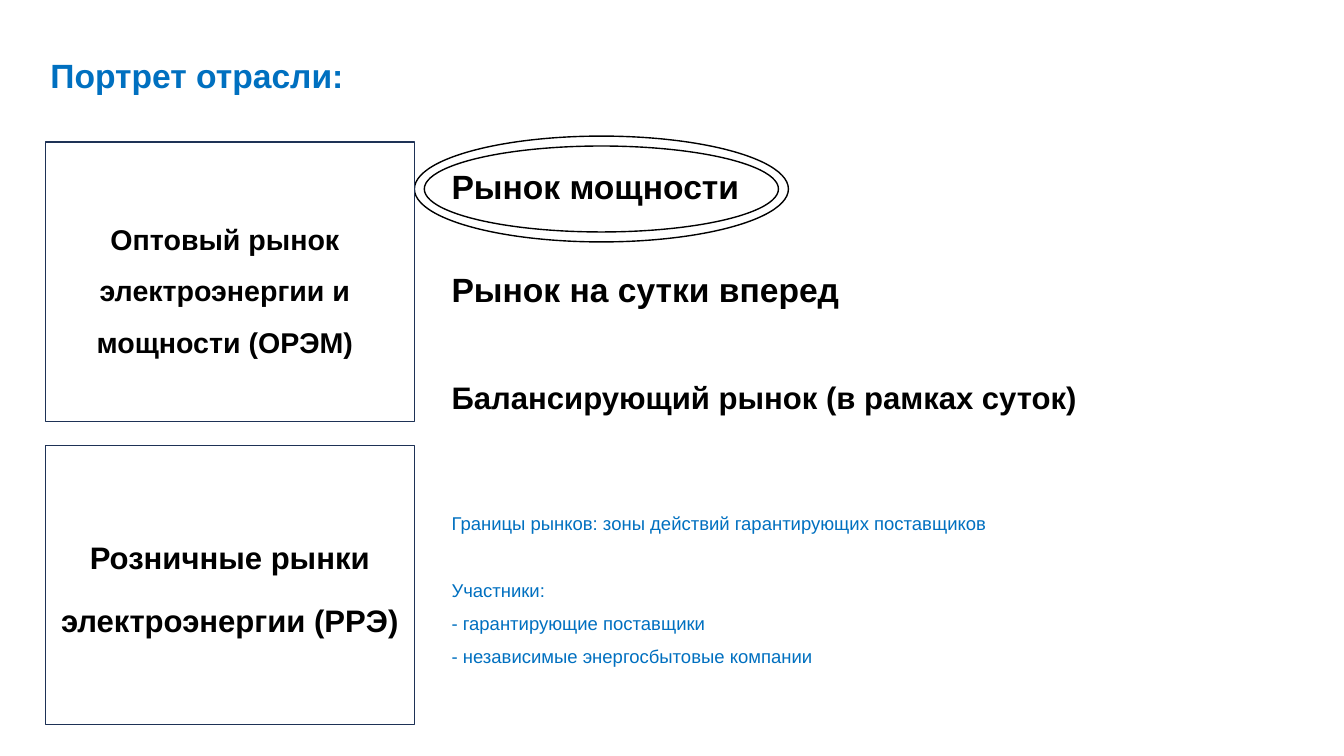
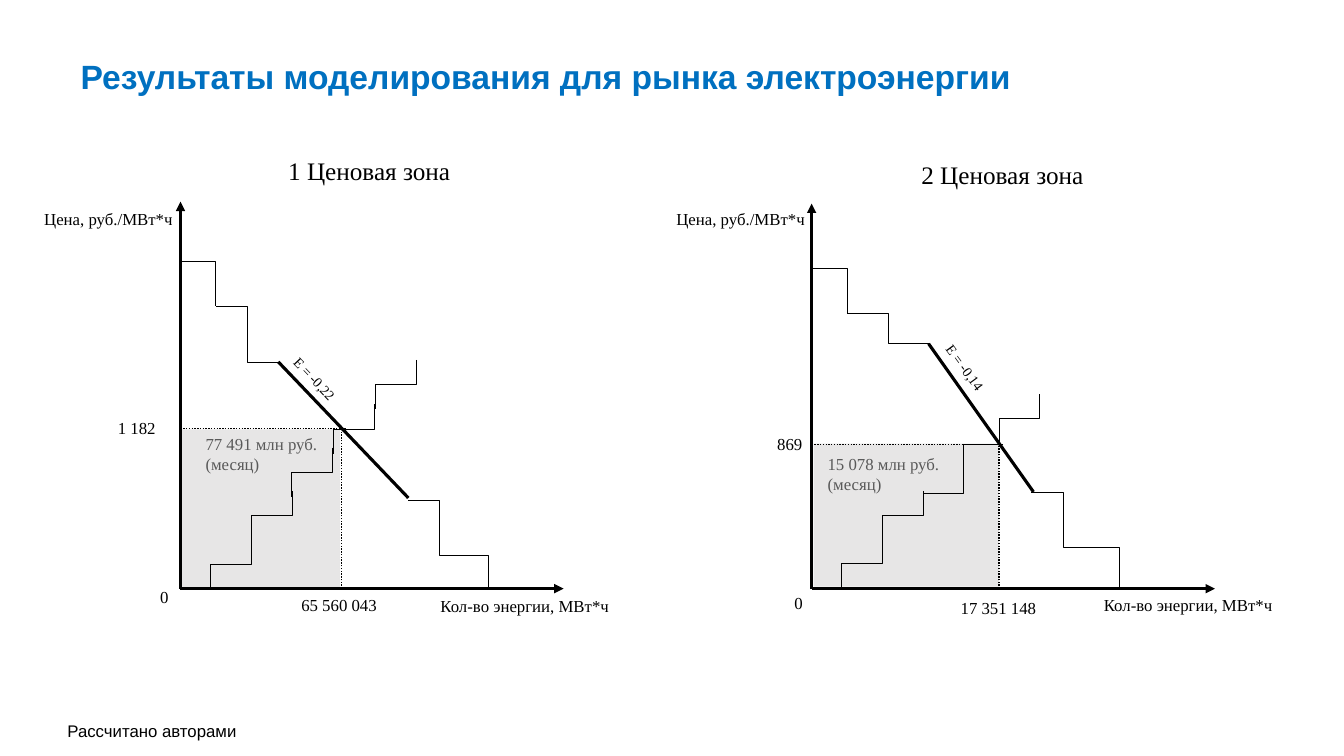
import pptx
import pptx.util
import pptx.dml.color
import pptx.enum.dml
import pptx.enum.shapes
import pptx.enum.text
import pptx.oxml
import pptx.oxml.ns

Inches, Pt = pptx.util.Inches, pptx.util.Pt
qn = pptx.oxml.ns.qn
SHAPE = pptx.enum.shapes.MSO_SHAPE
CONNECTOR = pptx.enum.shapes.MSO_CONNECTOR
ALIGN = pptx.enum.text.PP_ALIGN
ANCHOR = pptx.enum.text.MSO_ANCHOR
DOTTED = pptx.enum.dml.MSO_LINE.ROUND_DOT

BLUE, BLACK, WHITE = "0070C0", "000000", "FFFFFF"
NAVY, PALE, GREY = "1E3256", "E7E6E6", "595959"
SANS, SERIF = "Arial", "Times New Roman"


def rgb(color):
    return pptx.dml.color.RGBColor.from_string(color)


def write(tf, lines, size, font=SANS, color=BLACK, bold=False,
          align=ALIGN.LEFT, spacing=1.0, wrap=True):
    """Fill a text frame with equally formatted paragraphs."""
    tf.word_wrap = wrap
    tf.auto_size = pptx.enum.text.MSO_AUTO_SIZE.NONE
    tf.vertical_anchor = ANCHOR.TOP
    for i, line in enumerate(lines):
        p = tf.paragraphs[0] if i == 0 else tf.add_paragraph()
        p.text = line
        p.alignment, p.line_spacing = align, spacing
        p.font.size, p.font.name, p.font.bold = Pt(size), font, bold
        p.font.color.rgb = rgb(color)


def add_text(slide, box, lines, size, **style):
    s = slide.shapes.add_textbox(*map(Inches, box))
    write(s.text_frame, lines, size, **style)
    return s


def add_title(slide, box, text):
    s = slide.shapes.title
    s.left, s.top, s.width, s.height = map(Inches, box)
    write(s.text_frame, [text], 24, color=BLUE, bold=True, spacing=0.9)
    tf = s.text_frame
    tf.margin_left = tf.margin_right = Inches(0.1)
    tf.margin_top = tf.margin_bottom = Inches(0.05)


def add_shape(slide, kind, box, fill=WHITE, line=None):
    s = slide.shapes.add_shape(kind, *map(Inches, box))
    s.shadow.inherit = False
    s.fill.solid()
    s.fill.fore_color.rgb = rgb(fill)
    if line:
        s.line.color.rgb, s.line.width = rgb(line), Pt(1)
    else:
        s.line.fill.background()
    return s


def add_line(slide, start, end, width, dash=None, arrow=False,
             kind=CONNECTOR.STRAIGHT):
    s = slide.shapes.add_connector(kind, *map(Inches, (*start, *end)))
    s.line.color.rgb, s.line.width = rgb(BLACK), Pt(width)
    if dash:
        s.line.dash_style = dash
    properties = s._element.spPr
    if arrow:
        ln = properties.find(qn("a:ln"))
        ln.append(ln.makeelement(qn("a:tailEnd"), {"type": "triangle"}))
    properties.append(properties.makeelement(qn("a:effectLst"), {}))
    return s


def add_step(slide, start, end, drop_first):
    """Elbow line; one that drops first is a level elbow turned upright."""
    if not drop_first:
        return add_line(slide, start, end, 0.5, kind=CONNECTOR.ELBOW)
    (x1, y1), (x2, y2) = start, end
    mid_x, mid_y = (x1 + x2) / 2, (y1 + y2) / 2
    half_w, half_h = abs(x2 - x1) / 2, abs(y2 - y1) / 2
    rightward = x2 > x1
    reach = half_h if rightward else -half_h
    s = add_line(slide, (mid_x + reach, mid_y - half_w),
                 (mid_x - reach, mid_y + half_w), 0.5, kind=CONNECTOR.ELBOW)
    turn = 270 if rightward else 90
    s._element.spPr.find(qn("a:xfrm")).set("rot", str(turn * 60000))
    return s


# Slide 1: the two markets
def market_box(slide, box, text, size, spacing, text_top, left_margin):
    s = add_shape(slide, SHAPE.RECTANGLE, box, line=NAVY)
    write(s.text_frame, [text], size, bold=True, align=ALIGN.CENTER,
          spacing=spacing)
    s.text_frame.margin_top = Inches(text_top)
    s.text_frame.margin_left = Inches(left_margin)


def industry_slide(prs):
    slide = prs.slides.add_slide(prs.slide_layouts[5])
    add_title(slide, (0.4, 0.54, 8.72, 1.32), "Портрет отрасли:")

    # Ring around the first wholesale segment
    ring = add_shape(slide, SHAPE.DONUT, (4.11, 1.35, 3.71, 1.05), line=BLACK)
    ring.adjustments[0] = 0.094

    # Market boxes on the left
    market_box(slide, (0.45, 1.41, 3.66, 2.77),
               "Оптовый рынок электроэнергии и мощности (ОРЭМ)",
               20.4, 1.5, 0.62, 0)
    market_box(slide, (0.45, 4.42, 3.66, 2.77),
               "Розничные рынки электроэнергии (РРЭ)", 22.2, 1.7, 0.66, 0.1)

    # Wholesale segments
    for top, width, size, text in (
            (1.64, 4.88, 24, "Рынок мощности"),
            (2.66, 4.88, 24, "Рынок на сутки вперед"),
            (3.75, 6.65, 22.2, "Балансирующий рынок (в рамках суток)")):
        add_text(slide, (4.38, top, width, 0.5), [text], size, bold=True,
                 spacing=0.9)

    # Retail market details
    s = add_text(slide, (4.38, 4.92, 6.65, 1.84), [
        "Границы рынков: зоны действий гарантирующих поставщиков",
        "Участники:",
        "- гарантирующие поставщики",
        "- независимые энергосбытовые компании"],
        13.2, color=BLUE, spacing=1.5)
    s.text_frame.paragraphs[1].space_before = Pt(23.8)


# Slide 2: lengths in a zone run right and up from its origin;
# each label is (text, left, top, width)
ZONES = (
    dict(origin=(1.79, 5.84), axes=(3.8, 3.84), balance=(1.6, 1.59),
         area=(0, 1.58, 1.58, 1.58), guide=1.65,
         demand=((0.97, 2.25), (2.26, 0.9)),
         level_steps=(((0.35, 2.8), (0.97, 2.25)),
                      ((2.26, 0.88), (2.88, 0.33)),
                      ((2.61, 0.33), (3.49, 0))),
         drop_steps=(((0, 3.7), (0.35, 2.8)),
                     ((0.7, 0.49), (0.3, 0)),
                     ((1.11, 0.97), (0.7, 0.49)),
                     ((1.51, 1.4), (1.1, 0.91)),
                     ((1.92, 1.83), (1.52, 1.34)),
                     ((2.34, 2.27), (1.93, 1.78))),
         heading=("1 Ценовая зона", 0.97, 4.35, 1.86),
         quantity_axis=(2.41, -0.02, 1.94),
         elasticity=("E = -0,22", 0.97, 2.21, 0.73), angle=46.4,
         revenue=("77 491 млн руб.", 0.15, 1.59, 1.32),
         labels=(("Цена, руб./МВт*ч", -1.45, 3.82, 1.49),
                 ("1 182", -0.72, 1.74, 0.58),
                 ("65 560 043", 1.1, -0.01, 0.96),
                 ("0", -0.3, 0.07, 0.29))),
    dict(origin=(8.05, 5.84), axes=(4, 3.82), balance=(1.86, 1.43),
         area=(0.02, 1.44, 1.84, 1.42), guide=1.86,
         demand=((1.16, 2.43), (2.2, 0.96)),
         level_steps=(((0.36, 2.73), (1.16, 2.43)),
                      ((1.9, 1.43), (1.11, 0.95)),
                      ((2.18, 0.96), (2.81, 0.41)),
                      ((2.62, 0.41), (3.49, 0))),
         drop_steps=(((0.01, 3.63), (0.35, 2.72)),
                     ((0.7, 0.5), (0.29, 0.01)),
                     ((1.11, 0.97), (0.7, 0.48)),
                     ((2.26, 1.93), (1.86, 1.44))),
         heading=("2 Ценовая зона", 0.99, 4.31, 1.83),
         quantity_axis=(2.64, -0.01, 2.03),
         elasticity=("E = -0,14", 1.16, 2.32, 0.73), angle=53.8,
         revenue=("15 078 млн руб.", 0.06, 1.39, 1.32),
         labels=(("Цена, руб./МВт*ч", -1.44, 3.82, 1.49),
                 ("869", -0.44, 1.59, 0.45),
                 ("17 351 148", 1.38, -0.04, 0.96),
                 ("0", -0.27, 0.01, 0.29))),
)


def price_zone(slide, zone):
    left, base = zone["origin"]

    def at(x, y):
        return left + x, base - y

    def label(text, x, y, width, size=12, height=0.3, **style):
        return add_text(slide, (*at(x, y), width, height), text.split("\n"),
                        size, font=SERIF, **{"wrap": False, **style})

    # Revenue area and dotted guides
    x, y = zone["balance"]
    area_x, area_y, *area_size = zone["area"]
    add_shape(slide, SHAPE.RECTANGLE, (*at(area_x, area_y), *area_size),
              fill=PALE)
    add_line(slide, at(0, y), at(zone["guide"], y), 1, dash=DOTTED)
    add_line(slide, at(x, 0), at(x, y), 1, dash=DOTTED)

    # Axes and the elastic part of demand
    length, height = zone["axes"]
    add_line(slide, at(0, 0), at(0, height), 2.25, arrow=True)
    add_line(slide, at(0, 0), at(length, 0), 2.25, arrow=True)
    start, end = zone["demand"]
    add_line(slide, at(*start), at(*end), 2.25)

    # Stepped parts of demand and supply
    for name in ("level_steps", "drop_steps"):
        for start, end in zone[name]:
            add_step(slide, at(*start), at(*end), name == "drop_steps")

    # Labels
    label(*zone["heading"], size=18, height=0.4)
    label("Кол-во энергии, МВт*ч", *zone["quantity_axis"],
          align=ALIGN.RIGHT, wrap=True)
    for values in zone["labels"]:
        label(*values)
    label(*zone["elasticity"], size=10, height=0.27).rotation = zone["angle"]
    amount, *place = zone["revenue"]
    label(amount + "\n(месяц)", *place, height=0.5, color=GREY)


def results_slide(prs):
    slide = prs.slides.add_slide(prs.slide_layouts[5])
    add_title(slide, (0.7, 0.55, 11.92, 0.85),
              "Результаты моделирования для рынка электроэнергии")
    for zone in ZONES:
        price_zone(slide, zone)
    add_text(slide, (0.57, 7.1, 11.55, 0.3), ["Рассчитано авторами"], 12)


def main():
    prs = pptx.Presentation()
    prs.slide_width, prs.slide_height = Inches(13.33), Inches(7.5)
    industry_slide(prs)
    results_slide(prs)
    prs.save("out.pptx")


if __name__ == "__main__":
    main()
